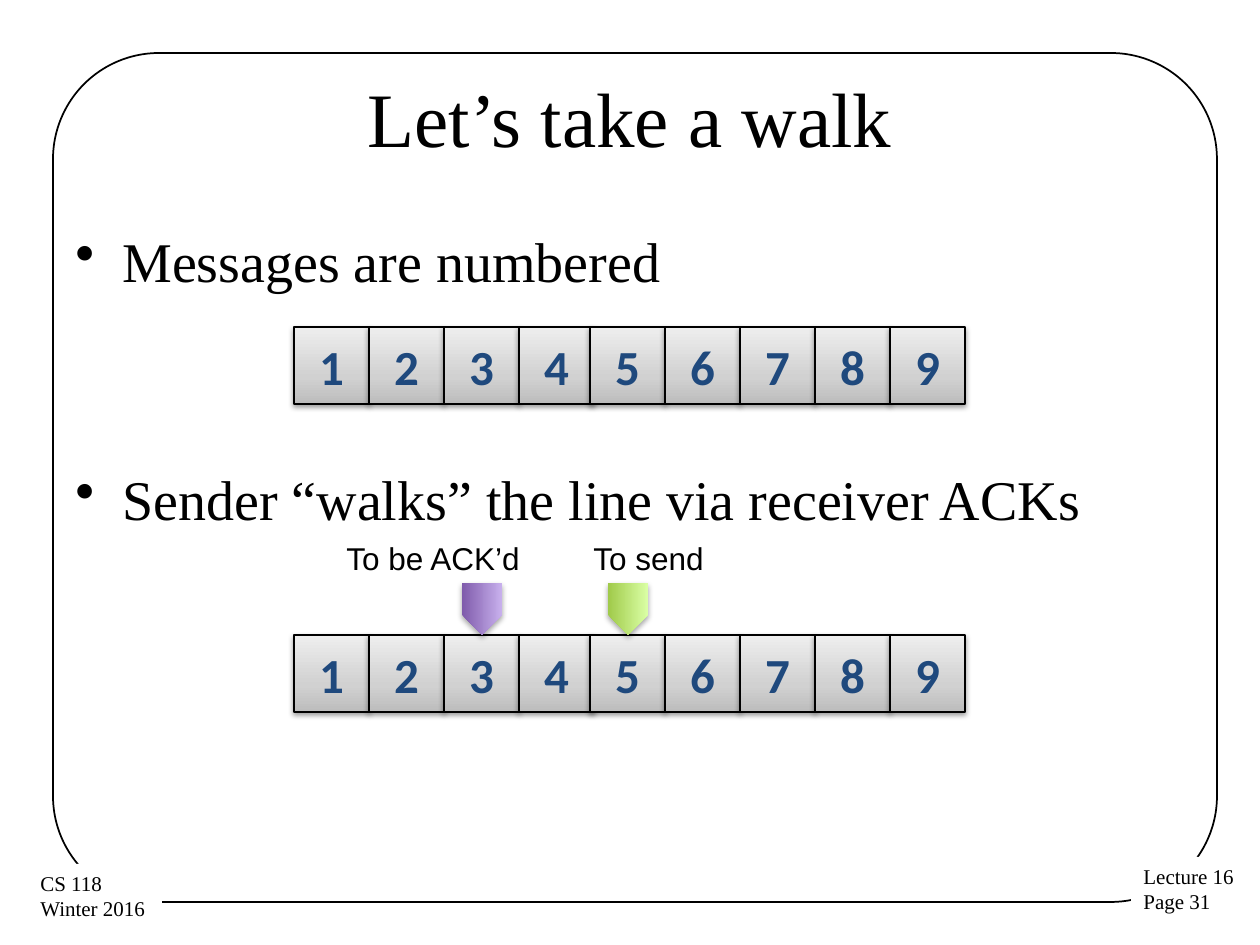
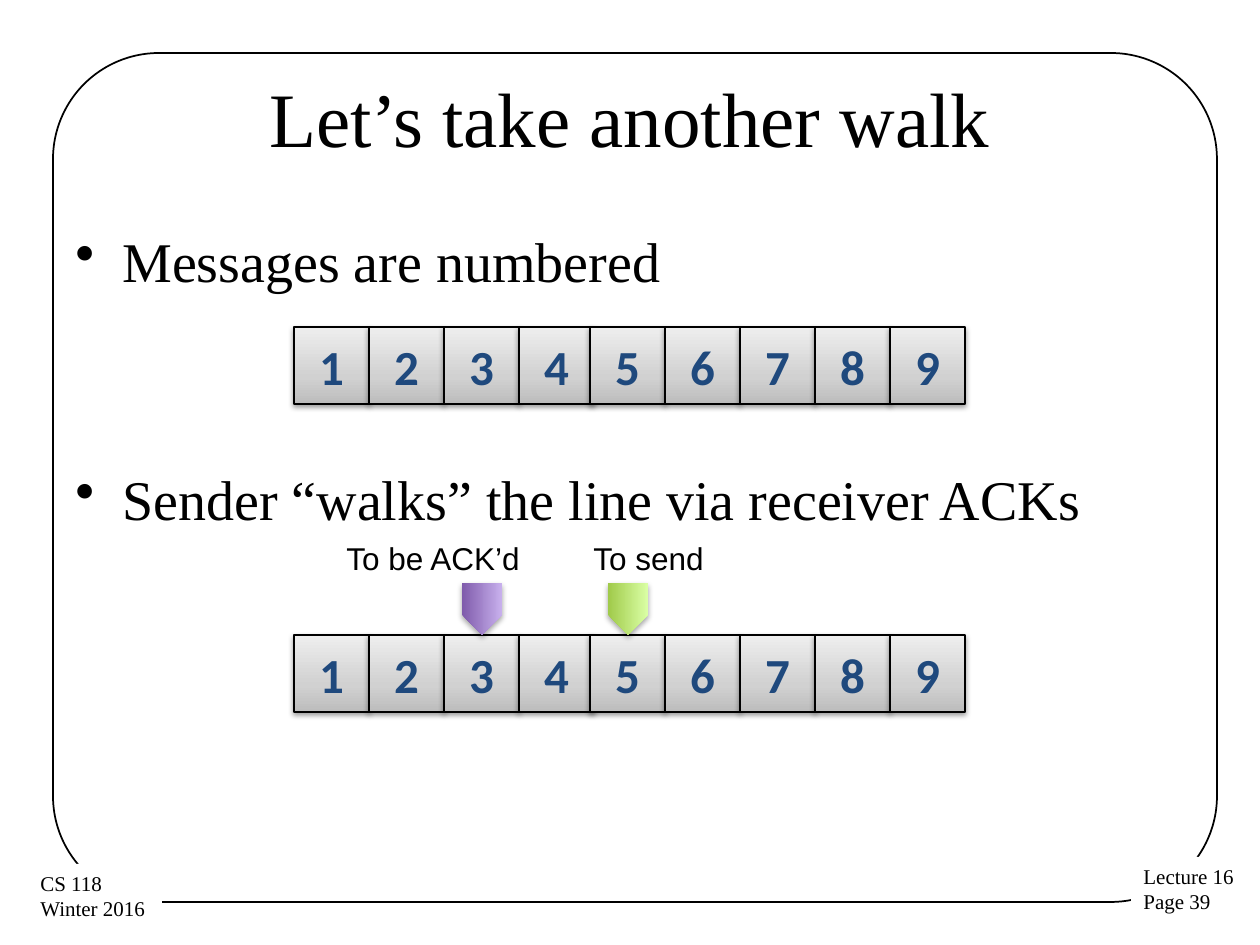
from dataclasses import dataclass
from typing import Any, NamedTuple

import lxml.etree
import pptx
import pptx.dml.color
import pptx.enum.shapes
import pptx.enum.text
import pptx.oxml.ns
import pptx.util

# Shared look
EMU_PER_PX = 914400 / 126
BLACK, WHITE, NAVY = "000000", "FFFFFF", "1F497D"
SERIF, SANS, CELL_FONT = "Times New Roman", "Arial", "Calibri"

SHAPES = pptx.enum.shapes.MSO_SHAPE
CENTER = pptx.enum.text.PP_ALIGN.CENTER
LEFT = pptx.enum.text.PP_ALIGN.LEFT
MIDDLE = pptx.enum.text.MSO_ANCHOR.MIDDLE
FIT_TEXT = pptx.enum.text.MSO_AUTO_SIZE.SHAPE_TO_FIT_TEXT

TITLE_FRAME = {"word_wrap": True, "vertical_anchor": MIDDLE}
BODY_FRAME = {"word_wrap": True}
LABEL_FRAME = {"word_wrap": False, "auto_size": FIT_TEXT}

# Message row geometry
CELL_WIDTH, CELL_HEIGHT = 75, 77
FIRST_HALF_LEFT, SECOND_HALF_LEFT = 294, 590
FIRST_HALF_COUNT, CELL_COUNT = 4, 9
NUMBERED_ROW_TOP, WALKED_ROW_TOP = 327, 635
POINTER_LENGTH, POINTER_WIDTH = 52, 40
BULLET_INDENT = 47


class Box(NamedTuple):
    left: int
    top: int
    width: int
    height: int


class TextStyle(NamedTuple):
    font: str
    size: int
    color: str = BLACK
    bold: bool = False
    alignment: Any = LEFT


class Shadow(NamedTuple):
    alpha: int
    distance: int


class Bullet(NamedTuple):
    text: str
    space_before: int


class Footer(NamedTuple):
    box: Box
    lines: list[str]


@dataclass(frozen=True)
class Pointer:
    label: str
    label_box: Box
    message: int
    gradient: dict[int, str]


@dataclass(frozen=True)
class WalkSlide:
    title: str
    page: int


TITLE_STYLE = TextStyle(SERIF, 44, alignment=CENTER)
BODY_STYLE = TextStyle(SERIF, 32)
FOOTER_STYLE = TextStyle(SERIF, 12)
CELL_STYLE = TextStyle(CELL_FONT, 28, NAVY, True, CENTER)
LABEL_STYLE = TextStyle(SANS, 18, alignment=CENTER)

CELL_GRADIENT = {0: "BDBDBD", 35: "D1D1D1", 100: "EEEEEE"}
CELL_SHADOW = Shadow(38, 20000)
POINTER_SHADOW = Shadow(35, 23000)

FRAME_BOX = Box(53, 53, 1164, 849)
TITLE_BOX = Box(63, 38, 1134, 157)
BODY_BOX = Box(63, 220, 1134, 624)

BULLETS = [
    Bullet("Messages are numbered", 6),
    Bullet("Sender “walks” the line via receiver ACKs", 98),
]
POINTERS = [
    Pointer("To send", Box(580, 533, 137, 50), 5, {0: "A0CA4A", 100: "DAFFA5"}),
    Pointer("To be ACK’d", Box(333, 533, 200, 50), 3, {0: "7F5BAB", 100: "C8B0ED"}),
]
WALKS = [
    WalkSlide("Let’s take a walk", 31),
    WalkSlide("Let’s take another walk", 39),
]


# Helpers
def px(value: int) -> int:
    return round(value * EMU_PER_PX)


def place(box: Box) -> list[int]:
    return [px(value) for value in box]


def rgb(color: str) -> pptx.dml.color.RGBColor:
    return pptx.dml.color.RGBColor.from_string(color)


def set_attributes(target: Any, values: dict[str, Any]) -> None:
    for name, value in values.items():
        setattr(target, name, value)


def add_xml(parent: Any, tag: str, **attributes: Any) -> Any:
    texts = {name: str(value) for name, value in attributes.items()}
    return lxml.etree.SubElement(parent, pptx.oxml.ns.qn(tag), texts)


def write(text_frame: Any, lines: list[str], style: TextStyle) -> None:
    for index, line in enumerate(lines):
        paragraph = text_frame.add_paragraph() if index else text_frame.paragraphs[0]
        paragraph.alignment = style.alignment
        run = paragraph.add_run()
        run.text = line
        size = pptx.util.Pt(style.size)
        set_attributes(run.font, {"name": style.font, "size": size, "bold": style.bold})
        run.font.color.rgb = rgb(style.color)


def add_text(slide: Any, box: Box, lines: list[str], style: TextStyle,
             frame_format: dict[str, Any]) -> Any:
    shape = slide.shapes.add_textbox(*place(box))
    set_attributes(shape.text_frame, frame_format)
    write(shape.text_frame, lines, style)
    return shape


def add_outline(shape: Any, points: float) -> None:
    shape.line.color.rgb = rgb(BLACK)
    shape.line.width = pptx.util.Pt(points)


def fill_gradient(shape: Any, stops: dict[int, str]) -> None:
    shape.fill.gradient()
    shape.fill.gradient_angle = 90
    stop_list = shape.element.spPr.find(".//" + pptx.oxml.ns.qn("a:gsLst"))
    for stop in list(stop_list):
        stop_list.remove(stop)
    for percent, color in stops.items():
        stop = add_xml(stop_list, "a:gs", pos=percent * 1000)
        add_xml(stop, "a:srgbClr", val=color)


def add_shadow(shape: Any, shadow: Shadow) -> None:
    shape.shadow.inherit = False
    effects = shape.element.spPr.find(pptx.oxml.ns.qn("a:effectLst"))
    outer = add_xml(effects, "a:outerShdw", blurRad=40000, dist=shadow.distance,
                    dir=5400000, rotWithShape=0)
    color = add_xml(outer, "a:srgbClr", val=BLACK)
    add_xml(color, "a:alpha", val=shadow.alpha * 1000)


# Slide parts
def add_frame(slide: Any) -> None:
    frame = slide.shapes.add_shape(SHAPES.ROUNDED_RECTANGLE, *place(FRAME_BOX))
    frame.adjustments[0] = 0.125
    frame.shadow.inherit = False
    frame.fill.background()
    add_outline(frame, 1)


def add_footers(slide: Any, page: int) -> None:
    footers = [
        Footer(Box(1131, 857, 117, 64), ["Lecture 16", f"Page {page}"]),
        Footer(Box(28, 864, 134, 64), ["CS 118", "Winter 2016"]),
    ]
    for footer in footers:
        shape = add_text(slide, footer.box, footer.lines, FOOTER_STYLE, LABEL_FRAME)
        shape.fill.solid()
        shape.fill.fore_color.rgb = rgb(WHITE)


def add_bullets(slide: Any) -> None:
    texts = [bullet.text for bullet in BULLETS]
    body = add_text(slide, BODY_BOX, texts, BODY_STYLE, BODY_FRAME)
    for paragraph, bullet in zip(body.text_frame.paragraphs, BULLETS):
        paragraph.space_before = pptx.util.Pt(bullet.space_before)
        properties = paragraph._p.get_or_add_pPr()
        properties.set("marL", str(px(BULLET_INDENT)))
        properties.set("indent", str(-px(BULLET_INDENT)))
        add_xml(properties, "a:buChar", char="•")


def cell_left(message: int) -> int:
    """The second half of the row slightly overlaps the first."""
    if message <= FIRST_HALF_COUNT:
        return FIRST_HALF_LEFT + (message - 1) * CELL_WIDTH
    return SECOND_HALF_LEFT + (message - FIRST_HALF_COUNT - 1) * CELL_WIDTH


def add_message_row(slide: Any, top: int) -> None:
    row = slide.shapes.add_group_shape()
    for message in range(1, CELL_COUNT + 1):
        box = Box(cell_left(message), top, CELL_WIDTH, CELL_HEIGHT)
        cell = row.shapes.add_shape(SHAPES.RECTANGLE, *place(box))
        fill_gradient(cell, CELL_GRADIENT)
        add_outline(cell, 0.75)
        add_shadow(cell, CELL_SHADOW)
        cell.text_frame.vertical_anchor = MIDDLE
        write(cell.text_frame, [str(message)], CELL_STYLE)


def add_pointer(slide: Any, pointer: Pointer) -> None:
    # The pentagon is turned about its centre, so its tip meets the row
    left = cell_left(pointer.message) + round((CELL_WIDTH - POINTER_LENGTH) / 2)
    top = WALKED_ROW_TOP - (POINTER_LENGTH + POINTER_WIDTH) // 2
    box = Box(left, top, POINTER_LENGTH, POINTER_WIDTH)
    marker = slide.shapes.add_shape(SHAPES.PENTAGON, *place(box))
    marker.rotation = 90
    fill_gradient(marker, pointer.gradient)
    marker.line.fill.background()
    add_shadow(marker, POINTER_SHADOW)
    add_text(slide, pointer.label_box, [pointer.label], LABEL_STYLE, LABEL_FRAME)


def add_walk_slide(presentation: Any, walk: WalkSlide) -> None:
    slide = presentation.slides.add_slide(presentation.slide_layouts[6])
    add_frame(slide)
    add_footers(slide, walk.page)
    add_text(slide, TITLE_BOX, [walk.title], TITLE_STYLE, TITLE_FRAME)
    add_bullets(slide)
    for top in (NUMBERED_ROW_TOP, WALKED_ROW_TOP):
        add_message_row(slide, top)
    for pointer in POINTERS:
        add_pointer(slide, pointer)


def main() -> None:
    presentation = pptx.Presentation()
    size = {"slide_width": px(1260), "slide_height": px(945)}
    set_attributes(presentation, size)
    for walk in WALKS:
        add_walk_slide(presentation, walk)
    presentation.save("out.pptx")


if __name__ == "__main__":
    main()
